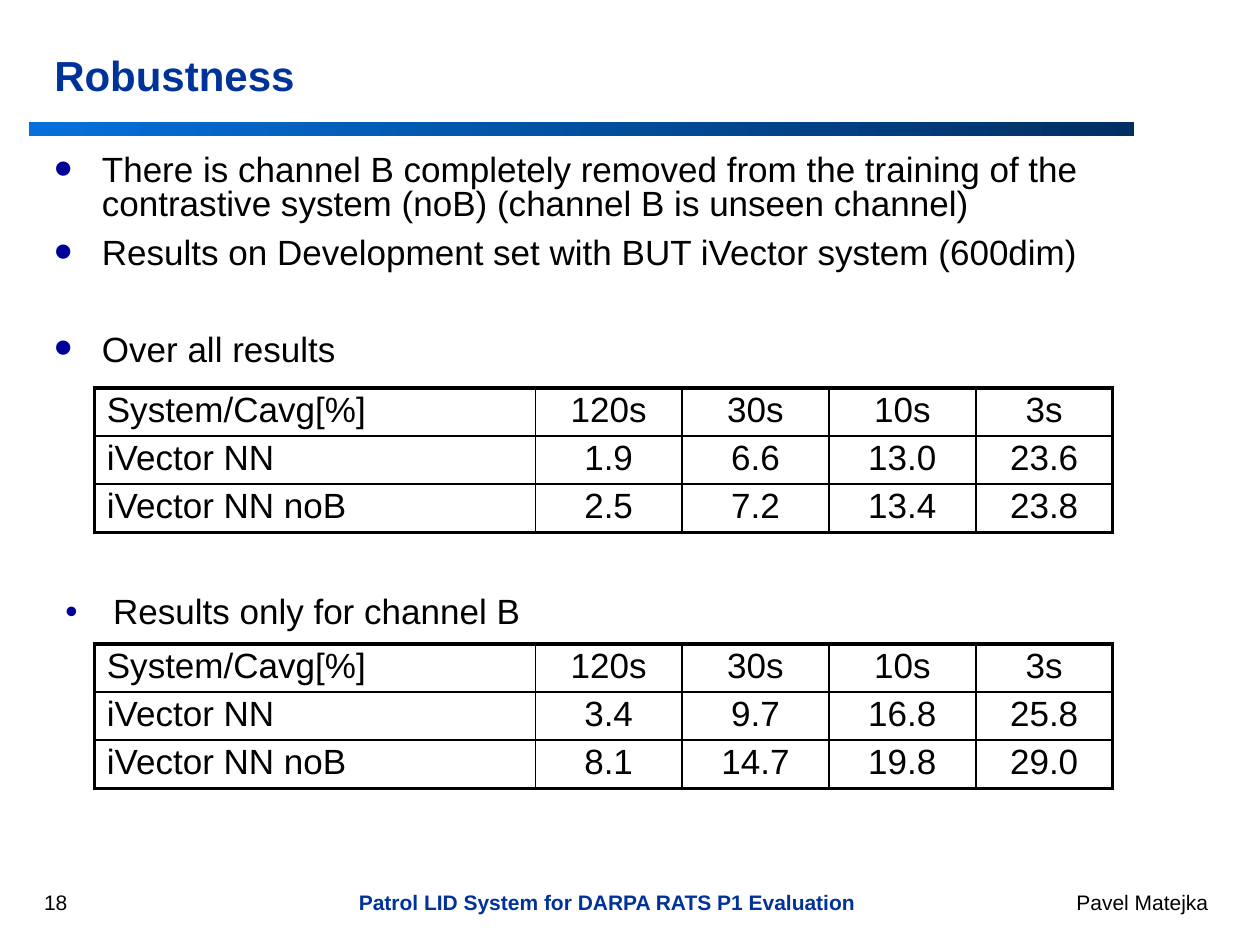
from dataclasses import dataclass

from lxml import etree
from pptx import Presentation
from pptx.dml.color import RGBColor
from pptx.enum.shapes import MSO_SHAPE
from pptx.enum.text import MSO_ANCHOR, MSO_AUTO_SIZE, PP_ALIGN
from pptx.oxml.ns import qn
from pptx.util import Cm, Pt

RECT = MSO_SHAPE.RECTANGLE
TOP, MIDDLE = MSO_ANCHOR.TOP, MSO_ANCHOR.MIDDLE
LEFT, CENTER = PP_ALIGN.LEFT, PP_ALIGN.CENTER
FIXED = MSO_AUTO_SIZE.NONE


@dataclass(frozen=True)
class Theme:
    font: str = "Arial"
    ink: str = "000000"
    blue: str = "003399"
    dot: str = "000099"
    bright: str = "0570DB"
    deep: str = "002F63"
    head: int = 24
    text: int = 20
    foot: int = 12
    thick: float = 2.25
    thin: float = 1


THEME = Theme()


def add(parent, tag, **attrs):
    node = etree.SubElement(parent, qn(tag))
    for key, value in attrs.items():
        node.set(key, str(value))
    return node


def write(para, text, size=THEME.text, color=THEME.ink, bold=False,
          align=LEFT, line=None, before=0, after=0):
    para.alignment = align
    para.space_before, para.space_after = Pt(before), Pt(after)
    if line:
        para.line_spacing = line
    run = para.add_run()
    run.text = text
    font = run.font
    font.name, font.size, font.bold = THEME.font, Pt(size), bold
    font.color.rgb = RGBColor.from_string(color)


def mark(para, scale=100):
    """Give the paragraph a hanging bullet, scaled in percent."""
    props = para._p.get_or_add_pPr()
    props.set("marL", str(Cm(0.96)))
    props.set("indent", str(-Cm(0.96)))
    add(add(props, "a:buClr"), "a:srgbClr", val=THEME.dot)
    add(props, "a:buSzPct", val=scale * 1000)
    add(props, "a:buFont", typeface=THEME.font)
    add(props, "a:buChar", char="•")


def edge(cell, tag, width):
    line = add(cell._tc.get_or_add_tcPr(), tag, w=Pt(width))
    add(add(line, "a:solidFill"), "a:srgbClr", val=THEME.ink)


class Page:
    def __init__(self, deck, theme):
        self.theme = theme
        self.slide = deck.slides.add_slide(deck.slide_layouts[1])
        self.shapes = self.slide.shapes

    def frame(self, shape, box, anchor=TOP):
        """Move a text shape to box and return its text frame."""
        shape.left, shape.top, shape.width, shape.height = map(Cm, box)
        frame = shape.text_frame
        frame.word_wrap, frame.auto_size = True, FIXED
        frame.vertical_anchor = anchor
        return frame

    def title(self, text, box):
        frame = self.frame(self.shapes.title, box, MIDDLE)
        write(frame.paragraphs[0], text, size=self.theme.head,
              color=self.theme.blue, bold=True)

    def body(self, items, box):
        """Fill the list; each item is a text and its space before."""
        frame = self.frame(self.slide.placeholders[1], box)
        for i, (text, before) in enumerate(items):
            para = frame.add_paragraph() if i else frame.paragraphs[0]
            mark(para, 150)
            write(para, text, line=0.8, before=before, after=4.4)

    def bar(self, box):
        shape = self.shapes.add_shape(RECT, *map(Cm, box))
        shape.shadow.inherit = False
        shape.line.fill.background()
        shape.fill.gradient()
        shape.fill.gradient_angle = 0
        tones = self.theme.bright, self.theme.deep
        for stop, tone in zip(shape.fill.gradient_stops, tones):
            stop.color.rgb = RGBColor.from_string(tone)

    def note(self, text, box):
        frame = self.frame(self.shapes.add_textbox(0, 0, 0, 0), box)
        para = frame.paragraphs[0]
        mark(para)
        write(para, text, line=0.9)

    def footer(self, parts, box):
        frame = self.frame(self.shapes.add_textbox(0, 0, 0, 0), box)
        para = frame.paragraphs[0]
        tabs = add(para._p.get_or_add_pPr(), "a:tabLst")
        add(tabs, "a:tab", pos=Cm(11.35), algn="ctr")
        add(tabs, "a:tab", pos=Cm(23.47), algn="r")
        number, name, author = parts
        size = self.theme.foot
        write(para, number + "\t", size=size)
        write(para, name, size=size, color=self.theme.blue, bold=True)
        write(para, "\t" + author, size=size)

    def table(self, rows, left, top, widths, height):
        last, end = len(rows) - 1, len(widths) - 1
        table = self.shapes.add_table(
            len(rows), len(widths), Cm(left), Cm(top),
            Cm(sum(widths)), Cm(height * len(rows))).table
        table.first_row = table.horz_banding = False
        for column, width in zip(table.columns, widths):
            column.width = Cm(width)
        for r, row in enumerate(rows):
            table.rows[r].height = Cm(height)
            for c, text in enumerate(row):
                cell = table.cell(r, c)
                cell.margin_top, cell.margin_bottom = Cm(0.13), Cm(0.05)
                outer = {"a:lnL": c == 0, "a:lnR": c == end,
                         "a:lnT": r == 0, "a:lnB": r == last}
                for tag, out in outer.items():
                    edge(cell, tag, self.theme.thick if out else self.theme.thin)
                cell.fill.background()
                write(cell.text_frame.paragraphs[0], text, line=0.9,
                      align=CENTER if c else LEFT)


def main():
    deck = Presentation()
    deck.slide_width, deck.slide_height = Cm(25.4), Cm(19.05)
    page = Page(deck, THEME)
    page.bar((0.58, 2.46, 22.28, 0.28))
    page.title("Robustness", (0.84, 0.5, 22, 2))
    page.body([
        ("There is channel B completely removed from the training of the "
         "contrastive system (noB) (channel B is unseen channel)", 0),
        ("Results on Development set with BUT iVector system (600dim)", 4.4),
        ("Over all results", 31.5),
    ], (0.84, 3.02, 22.43, 5.08))

    head = ["System/Cavg[%]", "120s", "30s", "10s", "3s"]
    results = [
        (7.82, ["1.9", "6.6", "13.0", "23.6"], ["2.5", "7.2", "13.4", "23.8"]),
        (12.98, ["3.4", "9.7", "16.8", "25.8"], ["8.1", "14.7", "19.8", "29.0"]),
    ]
    widths = [8.89, 2.96, 2.96, 2.96, 2.76]
    for top, full, part in results:
        rows = [head, ["iVector NN"] + full, ["iVector NN noB"] + part]
        page.table(rows, 1.9, top, widths, 0.97)

    page.note("Results only for channel B", (1.07, 11.86, 22.66, 1.1))
    page.footer(("18", "Patrol LID System for DARPA RATS P1 Evaluation",
                 "Pavel Matejka"), (0.64, 17.8, 24.36, 0.76))
    deck.save("out.pptx")


if __name__ == "__main__":
    main()
